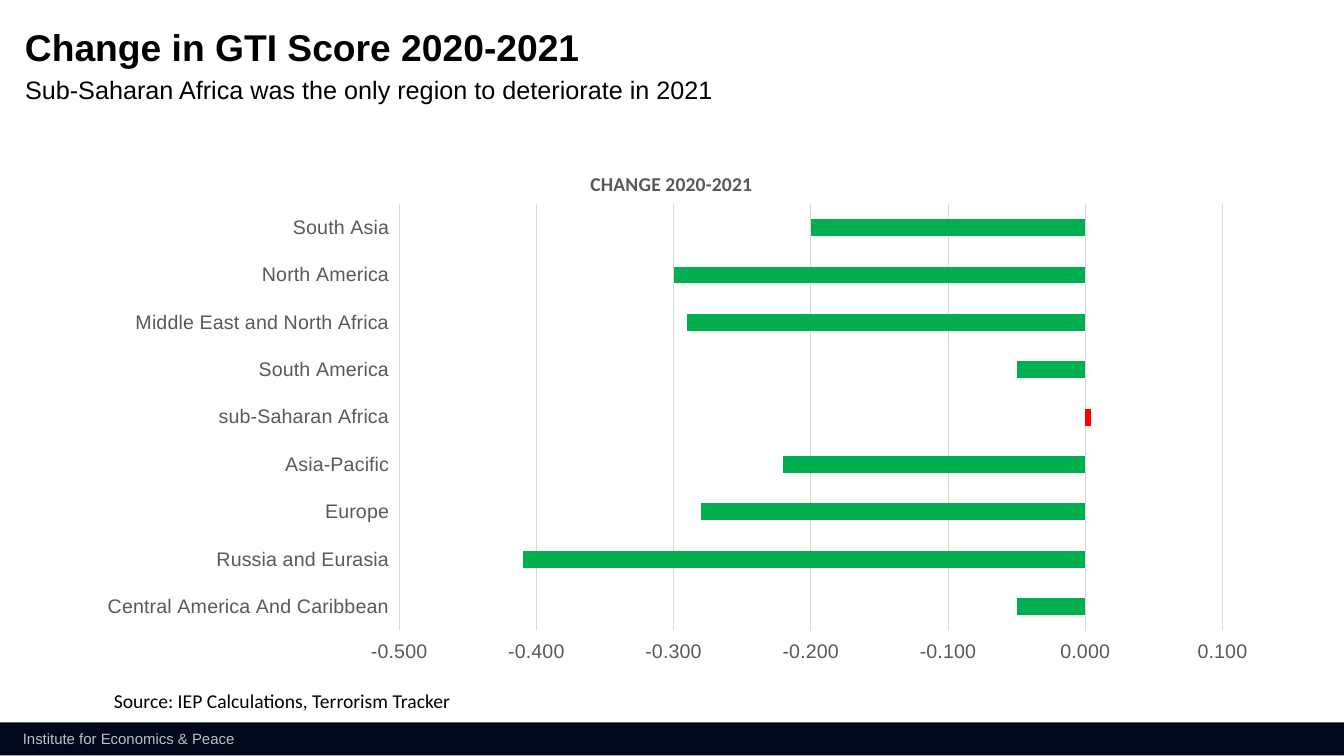
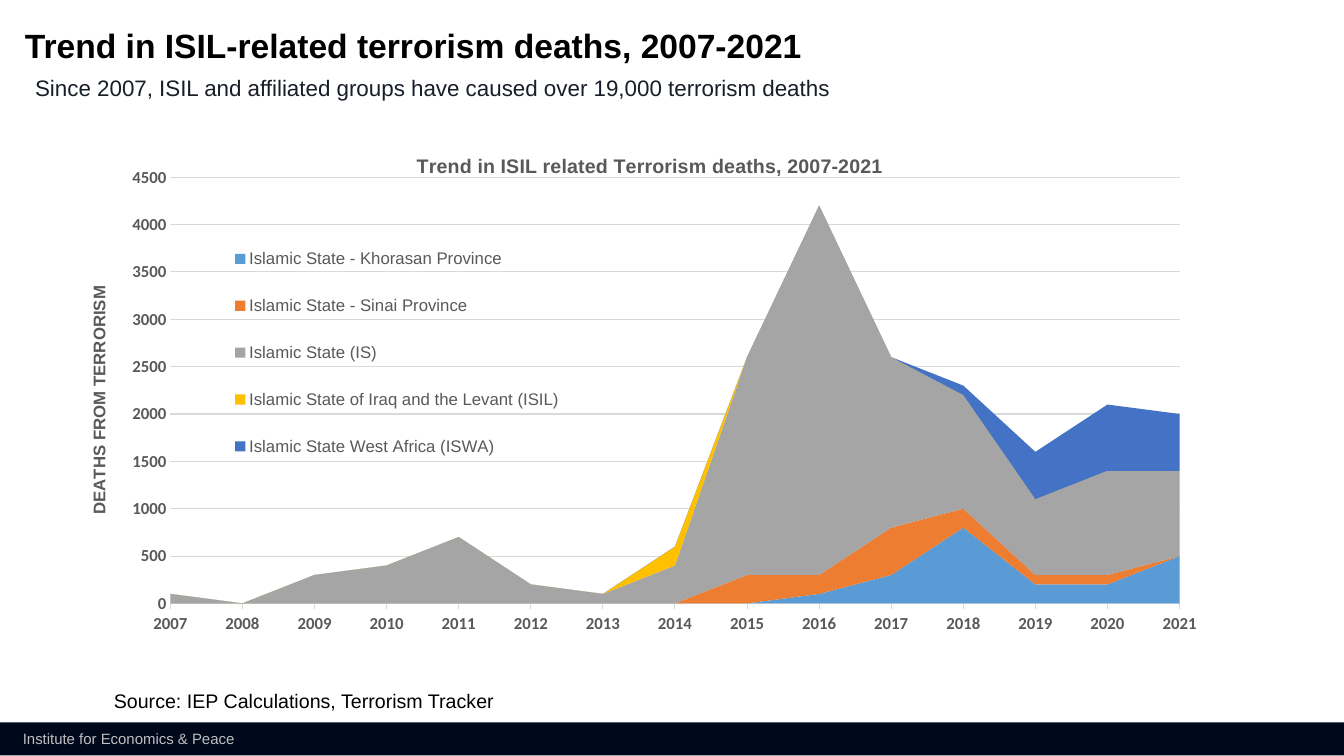
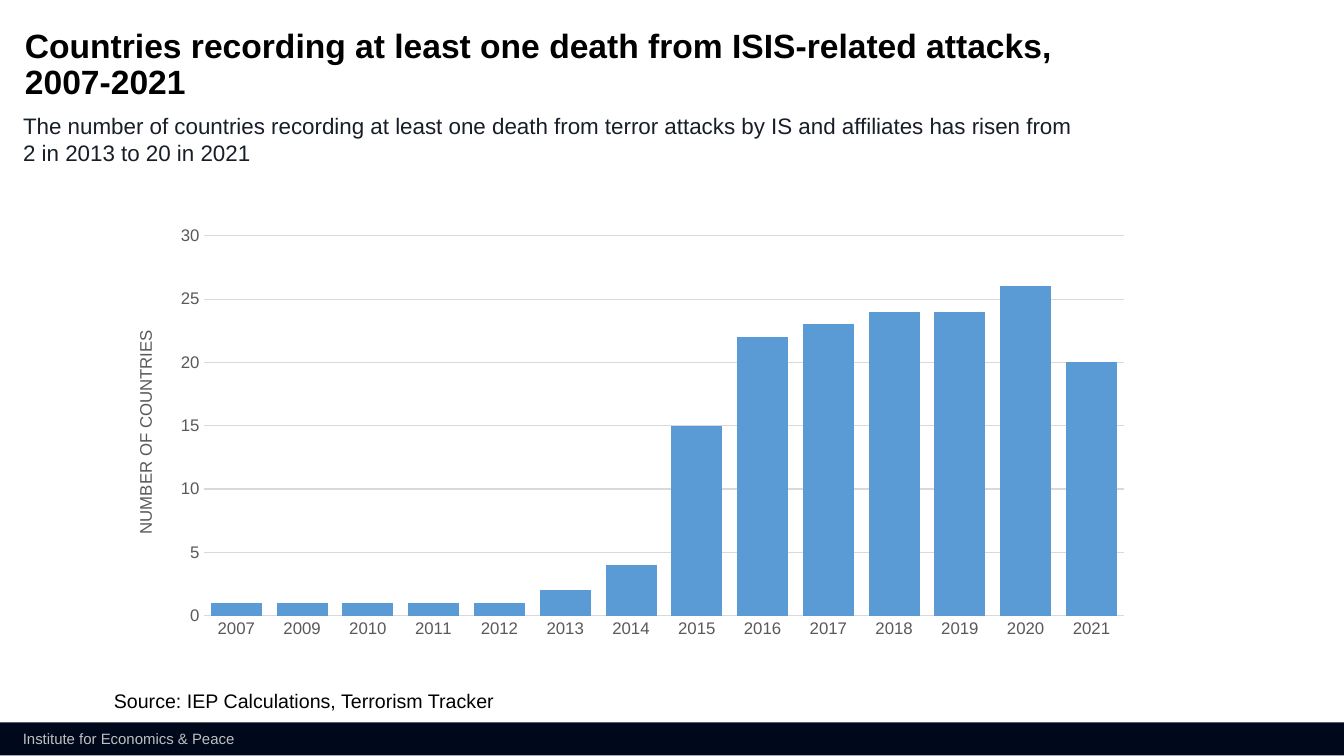
from lxml import etree
from pptx import Presentation
from pptx import util as u
from pptx.chart import data as cd
from pptx.dml import color as co
from pptx.enum import chart as ec, shapes as es, text as et
from pptx.oxml import ns

Pt = u.Pt
HUES = {"ink": "000000", "navy": "00081C", "dark": "181E28", "pale": "BFBFBF",
        "grey": "595959", "grid": "D9D9D9", "green": "00B050", "red": "FF0000",
        "blue": "5B9BD5", "orange": "ED7D31", "silver": "A5A5A5",
        "gold": "FFC000", "royal": "4472C4"}
RGB = {name: co.RGBColor.from_string(code) for name, code in HUES.items()}


def write(frame, text, size=14, hue="ink", bold=False, face="Arial", space=None):
    """Fill a text frame with one formatted paragraph."""
    para = frame.paragraphs[0]
    para.text = text
    para.line_spacing = space
    for run in para.runs:
        font = run.font
        font.size, font.bold, font.name = Pt(size), bold, face
        font.color.rgb = RGB[hue]


def place(part, x, y, w=None, h=None):
    """Give a chart part a fixed place, as fractions of the chart."""
    tag = ns.qn("c:layout")
    for old in part.findall(tag):
        part.remove(old)
    plot = part.tag == ns.qn("c:plotArea")
    layout = etree.Element(tag)
    part.insert(0 if plot else 1, layout)
    man = etree.SubElement(layout, ns.qn("c:manualLayout"))
    marks = [("layoutTarget", "inner")] if plot else []
    marks += [("xMode", "edge"), ("yMode", "edge"), ("x", x), ("y", y)]
    marks += [("w", w), ("h", h)] if w else []
    for name, value in marks:
        etree.SubElement(man, ns.qn("c:" + name)).set("val", str(value))


# Content of each slide
years = [str(y) for y in range(2007, 2022)]
kinds = ec.XL_CHART_TYPE
pages = [
    dict(
        title="Change in GTI Score 2020-2021", size=26.6, width=826.6,
        sub="Sub-Saharan Africa was the only region to deteriorate in 2021",
        spot=(10.8, 49.7, 713.5, 28.8), subsize=18, subhue="ink", face="Calibri",
        kind=kinds.BAR_CLUSTERED, area=(54.7, 107.3, 847.4, 366.5),
        plot=(0.272, 0.105, 0.694, 0.831),
        head="CHANGE 2020-2021", headface="Calibri", headspot=(0.43, 0.033),
        scale=(-0.5, 0.1, 0.1), fmt="0.000", tick=(14, False, "Arial"), gap=182,
        cats=["South Asia", "North America", "Middle East and North Africa",
              "South America", "sub-Saharan Africa", "Asia-Pacific", "Europe",
              "Russia and Eurasia", "Central America And Caribbean"],
        rows=[("Series 1", "green", [-0.2, -0.3, -0.29, -0.05, 0.004,
                                     -0.22, -0.28, -0.41, -0.05])]),
    dict(
        title="Trend in ISIL-related terrorism deaths, 2007-2021", size=24, width=776.9,
        sub="Since 2007, ISIL and affiliated groups have caused over 19,000 terrorism deaths",
        spot=(18, 49.7, 713.5, 26.6), subsize=16, subhue="dark", face="Arial",
        kind=kinds.AREA_STACKED, area=(61.2, 95.8, 806.4, 405.4),
        plot=(0.075, 0.076, 0.894, 0.751),
        head="Trend in ISIL related Terrorism deaths, 2007-2021",
        headface="Arial", headspot=(0.29, 0.028),
        side="DEATHS FROM TERRORISM", sidespot=(0, 0.262),
        scale=(0, 4500, 500), fmt="0", tick=(12, True, "Calibri"), cats=years,
        rows=[("Islamic State - Khorasan Province", "blue",
               [0] * 9 + [100, 300, 800, 200, 200, 500]),
              ("Islamic State - Sinai Province", "orange",
               [0] * 8 + [300, 200, 500, 200, 100, 100, 0]),
              ("Islamic State (IS)", "silver",
               [100, 0, 300, 400, 700, 200, 100, 400, 2300, 3900, 1800, 1200, 800, 1100, 900]),
              ("Islamic State of Iraq and the Levant (ISIL)", "gold",
               [0] * 7 + [200] + [0] * 7),
              ("Islamic State West Africa (ISWA)", "royal",
               [0] * 11 + [100, 500, 700, 600])]),
    dict(
        title="Countries recording at least one death from ISIS-related attacks, 2007-2021",
        size=24, width=789.1,
        sub="The number of countries recording at least one death from terror attacks"
            " by IS and affiliates has risen from \v2 in 2013 to 20 in 2021",
        spot=(9.4, 76.3, 815, 46), subsize=16, subhue="dark", face="Arial",
        kind=kinds.COLUMN_CLUSTERED, area=(82.1, 156.2, 735.8, 306),
        plot=(0.086, 0.04, 0.894, 0.887), side="NUMBER OF COUNTRIES",
        scale=(0, 30, 5), fmt="0", tick=(12, False, "Arial"), gap=29, overlap=-57,
        cats=[y for y in years if y != "2008"],
        rows=[("Series 1", "blue", [1, 1, 1, 1, 1, 2, 4, 15, 22, 23, 24, 24, 26, 20])]),
]

# Deck and its slides
deck = Presentation()
deck.slide_width, deck.slide_height = Pt(960), Pt(540)
base = deck.slide_layouts[5]
slides = [deck.slides.add_slide(base) for page in pages]

# Footer band, moved to the shared layout
band = slides[0].shapes.add_shape(es.MSO_SHAPE.RECTANGLE, 0, Pt(516), Pt(960), Pt(23.7))
band.shadow.inherit = False
band.fill.solid()
band.fill.fore_color.rgb = RGB["navy"]
band.line.fill.background()
foot = slides[0].shapes.add_textbox(Pt(9.2), Pt(517.6), Pt(167), Pt(20))
write(foot.text_frame, "Institute for Economics & Peace", size=10.7, hue="pale")
for num, item in enumerate((band, foot), 20):
    item._element.nvSpPr.cNvPr.set("id", str(num))
    base.shapes._spTree.append(item._element)

for slide, page in zip(slides, pages):
    # Title
    title = slide.shapes.title
    title.left, title.top, title.width, title.height = map(Pt, (17.8, 20.9, page["width"], 28.8))
    frame = title.text_frame
    frame.margin_left = frame.margin_right = frame.margin_top = frame.margin_bottom = 0
    frame.vertical_anchor = et.MSO_ANCHOR.TOP
    frame.auto_size = et.MSO_AUTO_SIZE.NONE
    frame.word_wrap = True
    write(frame, page["title"], size=page["size"], bold=True, space=0.9)
    frame.paragraphs[0].alignment = et.PP_ALIGN.LEFT

    # Subtitle and source
    notes = [(page["spot"], page["sub"], page["subsize"], page["subhue"], "Arial"),
             ((74.2, 488.2, 348, 24.5), "Source: IEP Calculations, Terrorism Tracker",
              14, "ink", page["face"])]
    for spot, words, size, hue, face in notes:
        box = slide.shapes.add_textbox(*map(Pt, spot))
        box.text_frame.word_wrap = True
        write(box.text_frame, words, size=size, hue=hue, face=face)

    # Chart
    data = cd.CategoryChartData(number_format=page["fmt"])
    data.categories = page["cats"]
    for name, hue, vals in page["rows"]:
        data.add_series(name, vals)
    chart = slide.shapes.add_chart(page["kind"], *map(Pt, page["area"]), data).chart
    chart.font.size, chart.font.name = Pt(10), "Calibri"
    chart.font.color.rgb = RGB["ink"]
    plot = chart.plots[0]
    plot.vary_by_categories = False
    if "gap" in page:
        plot.gap_width = page["gap"]
        plot.overlap = page.get("overlap", 0)
    for row, (name, hue, vals) in zip(plot.series, page["rows"]):
        row.format.fill.solid()
        row.format.fill.fore_color.rgb = RGB[hue]
        if "gap" in page:
            row.invert_if_negative = False
    place(chart._chartSpace.chart.plotArea, *page["plot"])

    # Axes
    cat, val = chart.category_axis, chart.value_axis
    for axis in (cat, val):
        axis.major_tick_mark = axis.minor_tick_mark = ec.XL_TICK_MARK.NONE
        font = axis.tick_labels.font
        font.size, font.bold, font.name = Pt(page["tick"][0]), *page["tick"][1:]
        font.color.rgb = RGB["grey"]
    val.minimum_scale, val.maximum_scale, val.major_unit = page["scale"]
    val.tick_labels.number_format = page["fmt"]
    val.tick_labels.number_format_is_linked = False
    val.format.line.fill.background()
    val.has_major_gridlines = True
    cat.has_major_gridlines = False
    for line in (cat.format.line, val.major_gridlines.format.line):
        line.color.rgb = RGB["grid"]
        line.width = Pt(0.75)

    # Chart and axis titles
    chart.has_legend = False
    chart.has_title = "head" in page
    if chart.has_title:
        write(chart.chart_title.text_frame, page["head"], hue="grey", bold=True,
              face=page["headface"])
        place(chart.chart_title._element, *page["headspot"])
    if "side" in page:
        side = val.axis_title
        write(side.text_frame, page["side"], size=12, hue="grey", bold=page["tick"][1])
        side.text_frame._txBody.bodyPr.set("rot", "-5400000")
        if "sidespot" in page:
            place(side._element, *page["sidespot"])

    # Features of one chart type
    if page["kind"] == kinds.BAR_CLUSTERED:
        cat.reverse_order = True
        cat.tick_label_position = ec.XL_TICK_LABEL_POSITION.LOW
        val.tick_label_position = ec.XL_TICK_LABEL_POSITION.HIGH
        worse = plot.series[0].points[4].format.fill
        worse.solid()
        worse.fore_color.rgb = RGB["red"]
    elif page["kind"] == kinds.AREA_STACKED:
        cat.major_tick_mark = ec.XL_TICK_MARK.OUTSIDE
        val._element.find(ns.qn("c:crossBetween")).set("val", "midCat")
        chart.has_legend = True
        key = chart.legend
        key.position = ec.XL_LEGEND_POSITION.BOTTOM
        key.include_in_layout = False
        key.font.size, key.font.name = Pt(12), "Arial"
        key.font.color.rgb = RGB["grey"]
        place(key._element, 0.121, 0.153, 0.31, 0.464)

deck.save("out.pptx")
